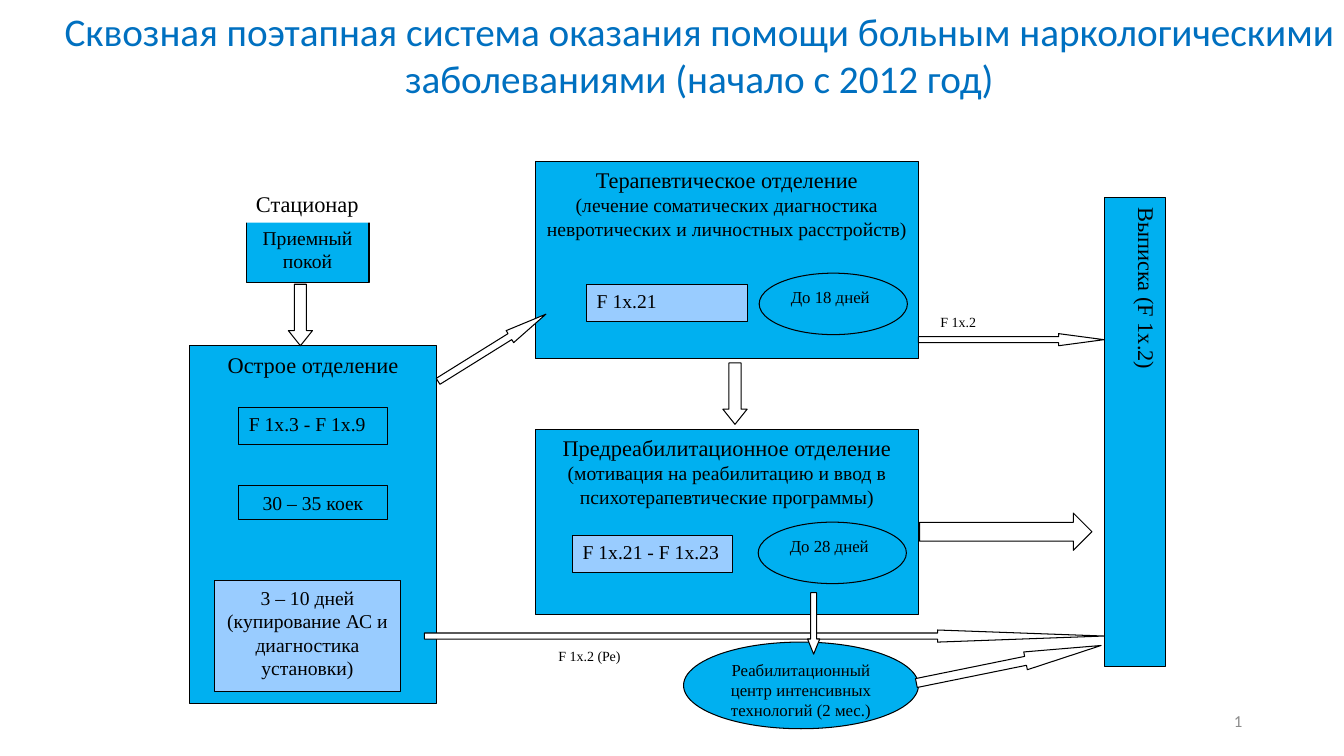
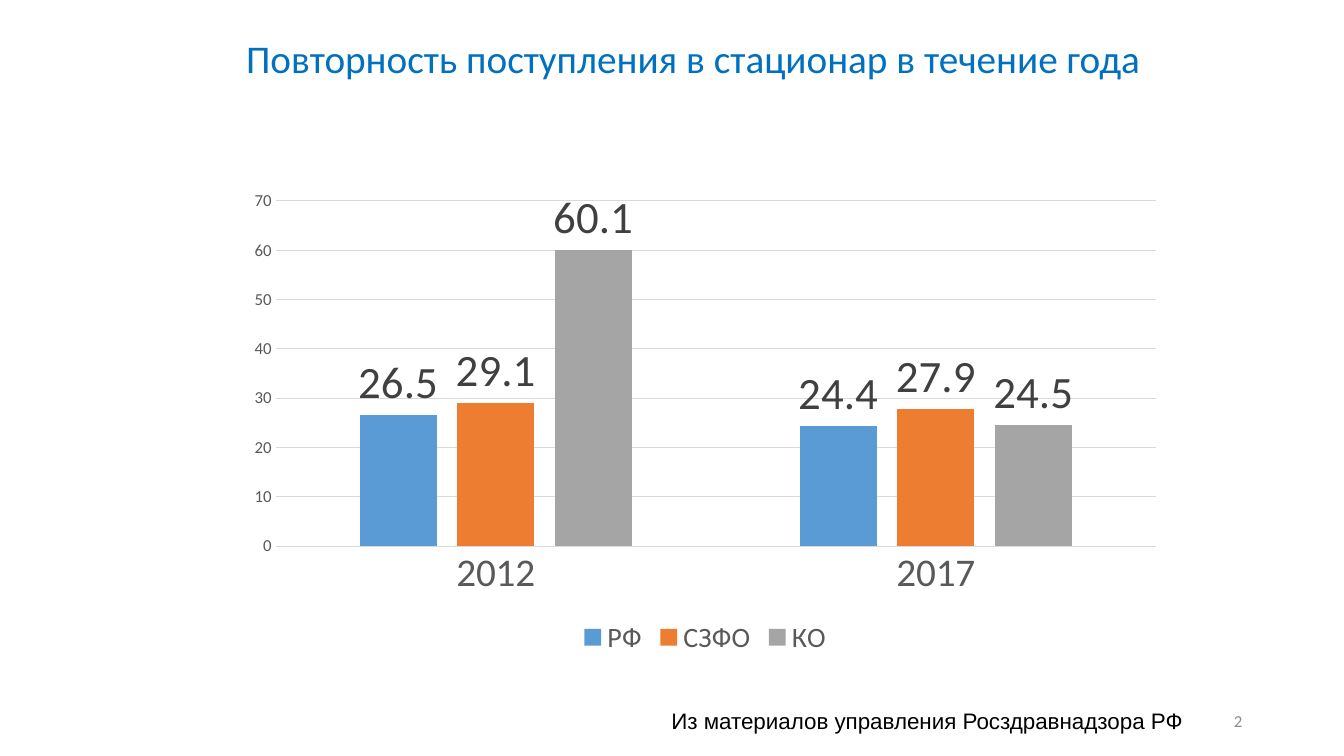
from dataclasses import dataclass

from lxml import etree
from pptx import Presentation
from pptx.chart.data import CategoryChartData
from pptx.dml.color import RGBColor
from pptx.enum.chart import XL_CHART_TYPE as CHART, XL_LABEL_POSITION as LABEL
from pptx.enum.chart import XL_LEGEND_POSITION as LEGEND, XL_TICK_MARK as TICK
from pptx.enum.shapes import MSO_SHAPE as SHAPE
from pptx.enum.text import MSO_ANCHOR as ANCHOR, MSO_AUTO_SIZE as AUTOSIZE, PP_ALIGN as ALIGN
from pptx.oxml.ns import qn
from pptx.util import Inches, Pt


def rgb(code):
    return RGBColor.from_string(code)


@dataclass(frozen=True)
class Theme:
    black: RGBColor = rgb("000000")
    white: RGBColor = rgb("FFFFFF")
    title: RGBColor = rgb("0070C0")
    stage: RGBColor = rgb("00B0F0")
    code: RGBColor = rgb("99CCFF")
    page: RGBColor = rgb("8C8C8C")
    axis: RGBColor = rgb("595959")
    grid: RGBColor = rgb("D9D9D9")
    value: RGBColor = rgb("404040")
    series: tuple = (rgb("5B9BD5"), rgb("ED7D31"), rgb("A5A5A5"))
    sans: str = "Calibri"
    serif: str = "Times New Roman"
    source: str = "Arial"
    title_size: int = 28
    head: int = 16
    body: int = 14
    small: int = 12
    tiny: int = 10
    legend: int = 20
    category: int = 28
    data_label: int = 32
    line: float = 0.75


T = Theme()


def style(font, name, size, color):
    font.name, font.size, font.color.rgb = name, Pt(size), color


def outline(line, color):
    line.color.rgb, line.width = color, Pt(T.line)


class Deck:
    def __init__(self):
        self.prs = Presentation()
        self.prs.slide_width, self.prs.slide_height = Inches(13.33), Inches(7.5)
        self.s = None

    def slide(self, title, box, align=ALIGN.CENTER):
        """Start a slide with its title and page number."""
        self.s = self.prs.slides.add_slide(self.prs.slide_layouts[5])
        sp = self.s.shapes.title
        sp.left, sp.top, sp.width, sp.height = map(Inches, box)
        tf = sp.text_frame
        tf.text, tf.word_wrap = title, True
        tf.auto_size, tf.vertical_anchor = AUTOSIZE.NONE, ANCHOR.TOP
        tf.paragraphs[0].alignment = align
        style(tf.paragraphs[0].font, T.sans, T.title_size, T.title)
        self.page_number()

    def page_number(self):
        p = self.text((9.42, 6.95, 3, 0.4), str(len(self.prs.slides)),
                      T.sans, T.small, T.page, ALIGN.RIGHT, ANCHOR.MIDDLE)
        r = p.runs[0]._r
        field = etree.Element(qn("a:fld"), type="slidenum",
                              id="{B6F15528-21DE-4FAA-801E-634DDDAF4B2B}")
        r.addprevious(field)
        field.extend(list(r))
        p._p.remove(r)

    def text(self, box, text, font, size, color, align=ALIGN.LEFT, anchor=ANCHOR.TOP):
        tf = self.s.shapes.add_textbox(*map(Inches, box)).text_frame
        tf.text, tf.word_wrap, tf.vertical_anchor = text, True, anchor
        p = tf.paragraphs[0]
        p.alignment = align
        style(p.font, font, size, color)
        return p

    def shape(self, kind, box, fill, line=True):
        sp = self.s.shapes.add_shape(kind, *map(Inches, box))
        sp.shadow.inherit = False
        sp.fill.solid()
        sp.fill.fore_color.rgb = fill
        if line:
            outline(sp.line, T.black)
        else:
            sp.line.fill.background()
        return sp

    def box(self, box, *lines, fill=T.stage, align=ALIGN.CENTER, kind=SHAPE.RECTANGLE, line=True):
        """Draw a shape holding (text, size) lines."""
        sp = self.shape(kind, box, fill, line)
        tf = sp.text_frame
        tf.word_wrap, tf.vertical_anchor = True, ANCHOR.TOP
        for i, (text, size) in enumerate(lines):
            p = tf.add_paragraph() if i else tf.paragraphs[0]
            p.text, p.alignment = text, align
            style(p.font, T.serif, size, T.black)
        return sp

    def label(self, box, text, size):
        self.box(box, (text, size), fill=T.white, align=ALIGN.LEFT, line=False)

    def code(self, box, text, fill=T.code):
        self.box(box, (text, T.body), fill=fill, align=ALIGN.LEFT)

    def oval(self, box, text, align=ALIGN.LEFT):
        self.box(box, (text, T.small), align=align, kind=SHAPE.OVAL)

    def arrow(self, box, head, kind=SHAPE.RIGHT_ARROW, turn=0):
        sp = self.shape(kind, box, T.white)
        sp.adjustments[0], sp.adjustments[1] = 0.5, head
        sp.rotation = turn

    def columns(self, box, categories, series):
        data = CategoryChartData()
        data.categories = categories
        for name, values in series.items():
            data.add_series(name, values)
        chart = self.s.shapes.add_chart(CHART.COLUMN_CLUSTERED, *map(Inches, box), data).chart
        style(chart.font, T.sans, T.tiny, T.black)
        chart.has_title = False
        chart.has_legend = True
        chart.legend.position, chart.legend.include_in_layout = LEGEND.BOTTOM, False
        style(chart.legend.font, T.sans, T.legend, T.axis)
        cat, val = chart.category_axis, chart.value_axis
        for axis, size in ((cat, T.category), (val, T.small)):
            axis.major_tick_mark = axis.minor_tick_mark = TICK.NONE
            style(axis.tick_labels.font, T.sans, size, T.axis)
        outline(cat.format.line, T.grid)
        val.format.line.fill.background()
        outline(val.major_gridlines.format.line, T.grid)
        plot = chart.plots[0]
        plot.gap_width, plot.overlap, plot.vary_by_categories = 219, -27, False
        for bars, color in zip(plot.series, T.series):
            bars.format.fill.solid()
            bars.format.fill.fore_color.rgb = color
            labels = bars.data_labels
            labels.show_value, labels.position = True, LABEL.OUTSIDE_END
            style(labels.font, T.sans, T.data_label, T.value)


def care_stages(d):
    d.slide("Сквозная поэтапная система оказания помощи больным наркологическими "
            "заболеваниями (начало с 2012 год)", (0.37, 0.02, 13.13, 1.04))

    d.box((2.44, 2.19, 1.22, 0.61), ("Приемный покой", T.body))
    d.label((2.44, 1.84, 1.47, 0.37), "Стационар", T.head)

    d.box((1.88, 3.43, 2.45, 3.55), ("Острое отделение", T.head))
    d.code((2.37, 4.04, 1.47, 0.37), "F 1х.3 - F 1х.9", T.stage)
    d.box((2.13, 5.76, 1.84, 1.1), ("3 – 10 дней", T.body),
          ("(купирование АС и диагностика установки)", T.body), fill=T.code)
    d.box((2.37, 4.82, 1.47, 0.33), ("30 – 35 коек", T.body))

    d.box((5.31, 1.6, 3.8, 1.96), ("Терапевтическое отделение", T.head),
          ("(лечение соматических диагностика невротических и личностных расстройств)", T.body))
    d.code((5.82, 2.82, 1.59, 0.37), "F 1х.21")
    d.oval((7.53, 2.71, 1.47, 0.61), "До 18 дней")

    d.box((5.31, 4.26, 3.8, 1.84), ("Предреабилитационное отделение", T.head),
          ("(мотивация на реабилитацию и ввод в психотерапевтические программы)", T.body))
    d.code((5.68, 5.31, 1.59, 0.37), "F 1х.21 - F 1х.23")
    d.oval((7.52, 5.18, 1.47, 0.61), "До 28 дней")

    discharge = d.box((10.95, 1.96, 0.61, 4.65), ("Выписка (F 1х.2)", T.head))
    discharge.text_frame._txBody.bodyPr.set("vert", "eaVert")

    d.arrow((2.86, 2.82, 0.24, 0.61), 0.625, SHAPE.DOWN_ARROW)
    d.arrow((4.25, 3.38, 1.26, 0.14), 3, turn=328.1)
    d.arrow((7.17, 3.6, 0.24, 0.61), 0.625, SHAPE.DOWN_ARROW)
    d.arrow((4.21, 6.25, 6.74, 0.12), 13.75)
    d.label((5.44, 6.37, 3.06, 0.24), "F 1х.2 (Ре)", T.tiny)
    d.arrow((9.11, 3.31, 1.84, 0.12), 3.75)
    d.label((9.23, 3.06, 1.06, 0.24), "F 1х.2", T.tiny)
    d.arrow((9.12, 5.09, 1.71, 0.37), 0.5)
    d.oval((6.78, 6.37, 2.33, 0.86), "Реабилитационный центр интенсивных технологий (2 мес.)",
           ALIGN.CENTER)
    d.arrow((8.01, 5.88, 0.12, 0.61), 1.25, SHAPE.DOWN_ARROW)
    d.arrow((9.07, 6.5, 1.87, 0.18), 4.25, turn=348.5)


def readmissions(d):
    d.slide("Повторность поступления в стационар в течение года",
            (2.34, 0.29, 9.16, 0.88), ALIGN.LEFT)
    d.columns((2.34, 1.8, 9.31, 4.75), ("2012", "2017"),
              {"РФ": (26.5, 24.4), "СЗФО": (29.1, 27.9), "КО": (60.1, 24.5)})
    d.text((6.56, 6.97, 5.72, 0.37), "Из материалов управления Росздравнадзора РФ",
           T.source, T.head, T.black)


def main():
    d = Deck()
    care_stages(d)
    readmissions(d)
    d.prs.save("out.pptx")


if __name__ == "__main__":
    main()
